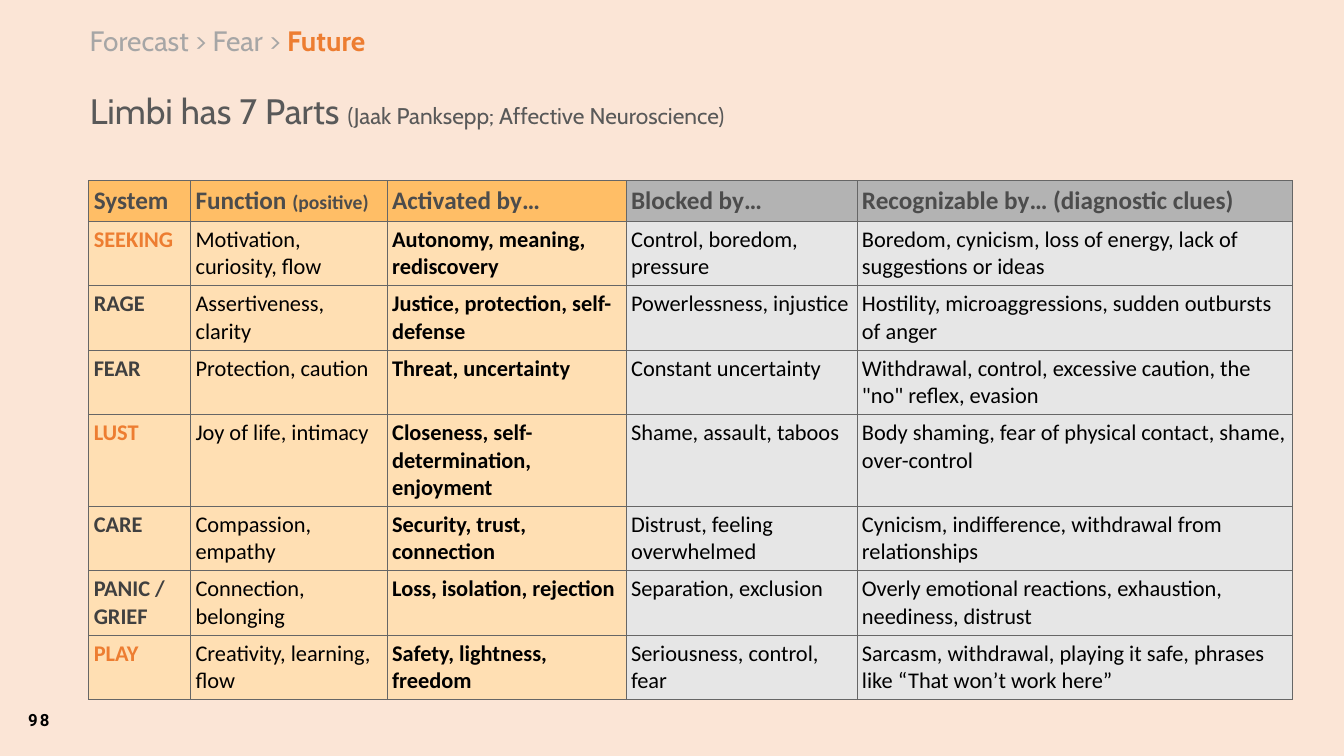
from lxml import etree
from pptx import Presentation, util as u
from pptx.dml.color import RGBColor
from pptx.enum import text
from pptx.oxml.ns import qn

BACKGROUND = RGBColor(0xFB, 0xE5, 0xD6)
BLACK = RGBColor(0, 0, 0)
TITLE_GRAY = RGBColor(0x59, 0x59, 0x59)
CRUMB_GRAY = RGBColor(0xA6, 0xA6, 0xA6)
HEAD_GRAY = RGBColor(0x4C, 0x4C, 0x4C)
SYSTEM_GRAY = RGBColor(0x40, 0x40, 0x40)
ORANGE = RGBColor(0xED, 0x7D, 0x31)
BORDER = RGBColor(0x66, 0x66, 0x66)
HEAD_FILLS = [RGBColor(0xFF, 0xBE, 0x66)] * 3 + [RGBColor(0xB3, 0xB3, 0xB3)] * 2
BODY_FILLS = [RGBColor(0xFF, 0xDF, 0xB3)] * 3 + [RGBColor(0xE6, 0xE6, 0xE6)] * 2

WIDTH, HEIGHT = 13.33, 7.5
MARGIN = 0.89
COLUMNS = [1.01, 1.95, 2.37, 2.29, 4.32]
HEAD_ROW, TWO_LINES, THREE_LINES = 0.4, 0.64, 0.91
HIGHLIGHTED = {"SEEKING", "LUST", "PLAY"}
HEADINGS = ["System", "Function ", "Activated by…", "Blocked by…",
            "Recognizable by… (diagnostic clues)"]
SYSTEMS = [
    ["SEEKING", "Motivation, curiosity, flow", "Autonomy, meaning, rediscovery",
     "Control, boredom, pressure",
     "Boredom, cynicism, loss of energy, lack of suggestions or ideas"],
    ["RAGE", "Assertiveness, clarity", "Justice, protection, self-defense",
     "Powerlessness, injustice",
     "Hostility, microaggressions, sudden outbursts of anger"],
    ["FEAR", "Protection, caution", "Threat, uncertainty", "Constant uncertainty",
     'Withdrawal, control, excessive caution, the "no" reflex, evasion'],
    ["LUST", "Joy of life, intimacy", "Closeness, self-determination, enjoyment",
     "Shame, assault, taboos",
     "Body shaming, fear of physical contact, shame, over-control"],
    ["CARE", "Compassion, empathy", "Security, trust, connection",
     "Distrust, feeling overwhelmed",
     "Cynicism, indifference, withdrawal from relationships"],
    ["PANIC / GRIEF", "Connection, belonging", "Loss, isolation, rejection",
     "Separation, exclusion",
     "Overly emotional reactions, exhaustion, neediness, distrust"],
    ["PLAY", "Creativity, learning, flow", "Safety, lightness, freedom",
     "Seriousness, control, fear",
     "Sarcasm, withdrawal, playing it safe, phrases like “That won’t work here”"],
]


def add_run(p, words, size=16, font="Calibri", color=BLACK, bold=False, spacing=None):
    r = p.add_run()
    r.text = words
    r.font.size = u.Pt(size)
    r.font.name = font
    r.font.color.rgb = color
    r.font.bold = bold
    if spacing:
        r._r.get_or_add_rPr().set("spc", str(int(spacing * 100)))


def add_line(s, box, right_inset=0.1, anchor=text.MSO_ANCHOR.TOP,
             align=text.PP_ALIGN.LEFT, line_spacing=0.9):
    tf = s.shapes.add_textbox(*map(u.Inches, box)).text_frame
    tf.word_wrap = True
    tf.vertical_anchor = anchor
    tf.margin_left, tf.margin_right = 0, u.Inches(right_inset)
    p = tf.paragraphs[0]
    p.alignment = align
    p.line_spacing = line_spacing
    return p


def add_breadcrumb(s, box):
    p = add_line(s, box)
    add_run(p, "Forecast > Fear > ", size=20, font="Cabin", color=CRUMB_GRAY)
    add_run(p, "Future", size=20, font="Cabin", color=ORANGE, bold=True)


def add_title(s, box):
    p = add_line(s, box)
    add_run(p, "Limbi has 7 Parts ", size=25.2, font="Cabin", color=TITLE_GRAY)
    add_run(p, "(Jaak Panksepp; Affective Neuroscience)", size=16.2, font="Cabin",
            color=TITLE_GRAY)


def add_page_number(s, box):
    p = add_line(s, box, right_inset=0, anchor=text.MSO_ANCHOR.MIDDLE,
                 align=text.PP_ALIGN.RIGHT, line_spacing=1.0)
    add_run(p, "98", size=12, font="Roboto", bold=True, spacing=1.5)


def style_cell(cell, fill):
    tcPr = cell._tc.get_or_add_tcPr()
    for side in ("lnL", "lnR", "lnT", "lnB"):
        ln = etree.SubElement(tcPr, qn(f"a:{side}"), w=str(u.Pt(0.43)))
        solid = etree.SubElement(ln, qn("a:solidFill"))
        etree.SubElement(solid, qn("a:srgbClr"), val=str(BORDER))
    cell.fill.solid()
    cell.fill.fore_color.rgb = fill
    cell.margin_left = cell.margin_right = u.Inches(0.05)
    cell.margin_top = cell.margin_bottom = u.Inches(0.05)


def add_systems_table(s, left, top):
    heights = [HEAD_ROW] + [THREE_LINES if row[0] == "LUST" else TWO_LINES
                            for row in SYSTEMS]
    box = (left, top, sum(COLUMNS), sum(heights))
    table = s.shapes.add_table(len(heights), len(COLUMNS), *map(u.Inches, box)).table
    table.first_row = table.horz_banding = False
    for column, width in zip(table.columns, COLUMNS):
        column.width = u.Inches(width)
    for row, height in zip(table.rows, heights):
        row.height = u.Inches(height)
    for i, words in enumerate([HEADINGS] + SYSTEMS):
        for j, entry in enumerate(words):
            cell = table.cell(i, j)
            style_cell(cell, (BODY_FILLS if i else HEAD_FILLS)[j])
            p = cell.text_frame.paragraphs[0]
            if i == 0:
                add_run(p, entry, size=18, color=HEAD_GRAY, bold=True)
                if j == 1:
                    add_run(p, "(positive)", size=14, color=HEAD_GRAY, bold=True)
            elif j == 0:
                color = ORANGE if entry in HIGHLIGHTED else SYSTEM_GRAY
                add_run(p, entry, color=color, bold=True)
            else:
                add_run(p, entry, bold=j == 2)


def main():
    prs = Presentation()
    prs.slide_width, prs.slide_height = u.Inches(WIDTH), u.Inches(HEIGHT)
    s = prs.slides.add_slide(prs.slide_layouts[6])
    s.background.fill.solid()
    s.background.fill.fore_color.rgb = BACKGROUND
    add_page_number(s, (-0.03, 6.98, 0.52, 0.32))
    add_title(s, (MARGIN, 0.88, 11.92, 0.68))
    add_breadcrumb(s, (MARGIN, 0.22, 9.03, 0.5))
    add_systems_table(s, 0.88, 1.79)
    prs.save("out.pptx")


if __name__ == "__main__":
    main()
